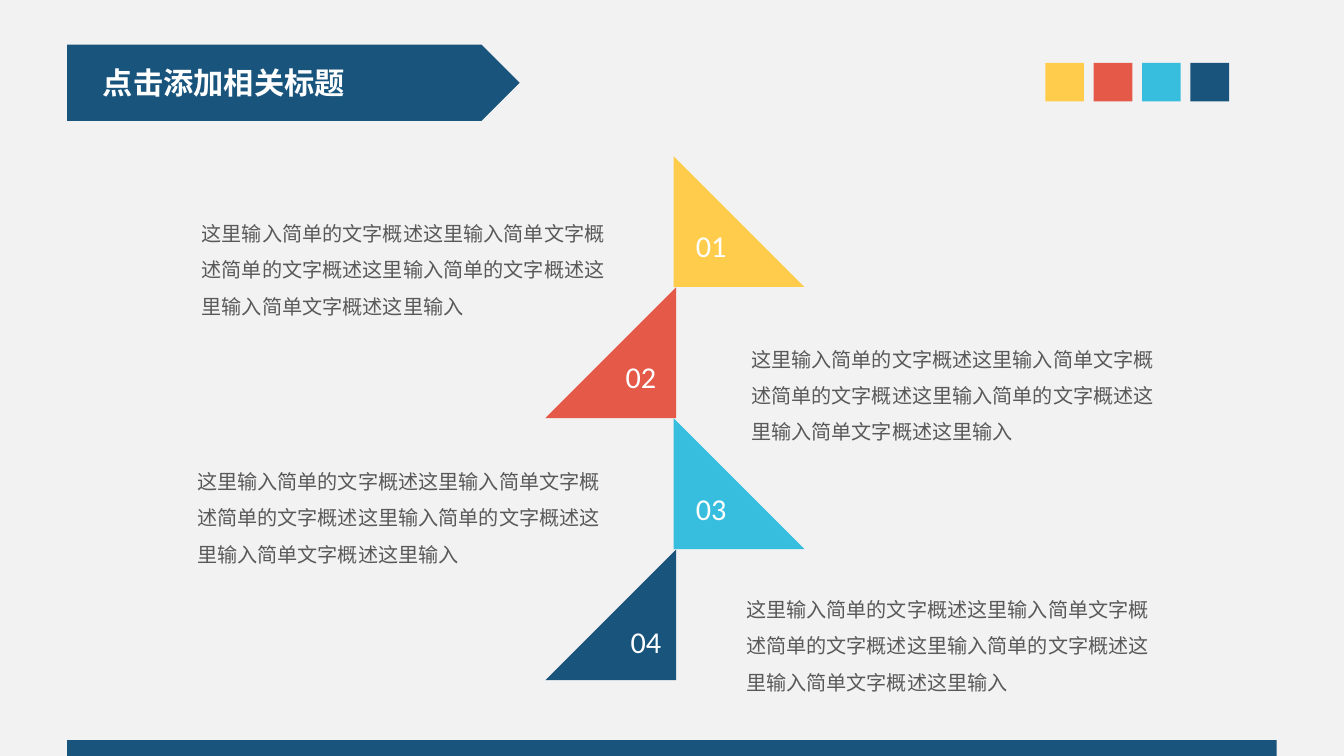
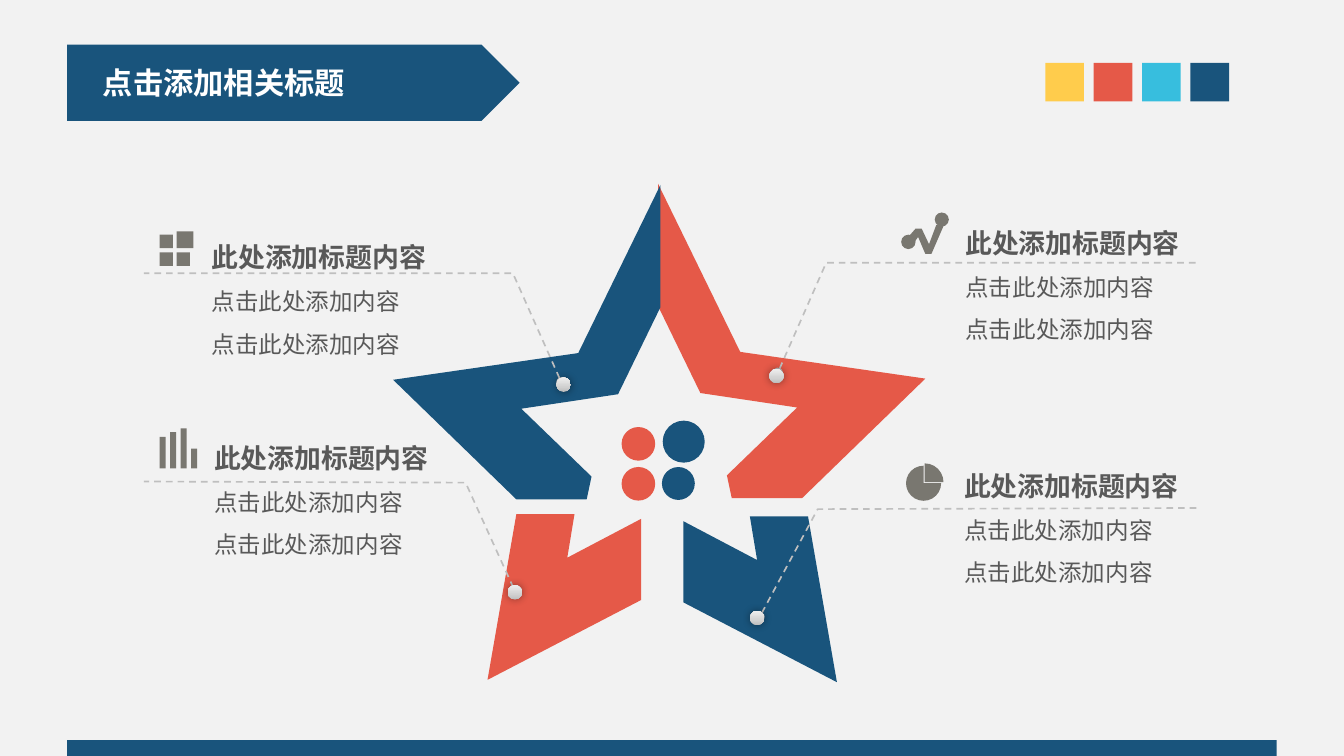
from copy import deepcopy

from lxml import etree
from pptx import Presentation
from pptx.dml.color import RGBColor
from pptx.enum.dml import MSO_LINE
from pptx.enum.shapes import MSO_SHAPE
from pptx.enum.text import MSO_ANCHOR, MSO_AUTO_SIZE, PP_ALIGN
from pptx.oxml.ns import qn
from pptx.util import Pt

RECT = MSO_SHAPE.RECTANGLE
OVAL = MSO_SHAPE.OVAL
ARROW = MSO_SHAPE.PENTAGON
CORNER = MSO_SHAPE.RIGHT_TRIANGLE
PIE = MSO_SHAPE.PIE
WEDGE = MSO_SHAPE.PIE_WEDGE
DASH = MSO_LINE.DASH
TOP = MSO_ANCHOR.TOP
GROW = MSO_AUTO_SIZE.SHAPE_TO_FIT_TEXT
LEFT, CENTER, EVEN = PP_ALIGN.LEFT, PP_ALIGN.CENTER, PP_ALIGN.JUSTIFY

YELLOW, RED, CYAN, NAVY = PALETTE = "FFCC4C", "E55948", "37BEDE", "19547C"
PAPER, INK, WHITE = "F2F2F2", "595959", "FFFFFF"
ICON, RULE = "797770", "BFBFBF"
METAL = (0, "BDBDBD"), (0.35, "D1D1D1"), (1, "EEEEEE")
LATIN, HAN = "Calibri", "Noto Sans CJK SC"

TITLE = "点击添加相关标题"
BODY = "这里输入简单的文字概述这里输入简单文字概述简单的文字概述这里输入简单的文字概述这里输入简单文字概述这里输入"
HEAD = "此处添加标题内容"
ITEM = "点击此处添加内容"


def color(code):
    return RGBColor.from_string(code)


def write(frame, text, size=18, font=LATIN, ink=INK, bold=False,
          align=LEFT, space=None):
    """Fill the first paragraph if it is free, else add one."""
    last = frame.paragraphs[-1]
    para = frame.add_paragraph() if last.runs else last
    para.alignment = align
    if space:
        para.line_spacing = space
    run = para.add_run()
    run.text = text
    run.font.size = Pt(size)
    run.font.bold = bold
    run.font.name = font
    run.font.color.rgb = color(ink)
    latin = para._p.find(".//" + qn("a:latin"))
    latin.addnext(latin.makeelement(qn("a:ea"), {"typeface": HAN}))


def mirror(points, span, drop):
    """Reflect about x = span / 2, then move down by drop."""
    return [(span - x, y + drop) for x, y in points]


class Deck:
    def __init__(self):
        self.show = Presentation()
        self.show.slide_width, self.show.slide_height = Pt(800), Pt(450)
        fill = self.show.slide_master.background.fill
        fill.solid()
        fill.fore_color.rgb = color(PAPER)
        self.slide = None

    def page(self, title):
        """Start a slide with the shared band, swatches and footer."""
        self.slide = self.show.slides.add_slide(self.show.slide_layouts[5])
        self.shape(ARROW, 40, 26.6, 269.3, 45.4, NAVY)
        self.shape(RECT, 40, 440.6, 720, 11.5, NAVY)
        for i, code in enumerate(PALETTE):
            self.shape(RECT, 622.2 + 28.8 * i, 37.4, 23, 23, code)
        box = self.slide.shapes.title
        self.slide.shapes.element.append(box.element)
        box.left, box.top, box.width, box.height = map(Pt, (54, 34.6, 160, 29))
        self.setup(box.text_frame, wrap=False)
        write(box.text_frame, title, font=HAN, ink=WHITE, bold=True)

    def setup(self, frame, wrap=True, inset=(7.2, 3.6)):
        frame.word_wrap = wrap
        frame.auto_size = GROW
        frame.vertical_anchor = TOP
        frame.margin_left = frame.margin_right = Pt(inset[0])
        frame.margin_top = frame.margin_bottom = Pt(inset[1])

    def box(self, x, y, w, h, **style):
        area = self.slide.shapes.add_textbox(Pt(x), Pt(y), Pt(w), Pt(h))
        self.setup(area.text_frame, **style)
        return area.text_frame

    def group(self):
        return self.slide.shapes.add_group_shape()

    def paint(self, item, code):
        item.shadow.inherit = False
        item.fill.solid()
        item.fill.fore_color.rgb = color(code)
        item.line.fill.background()
        return item

    def shape(self, kind, x, y, w, h, code, home=None):
        shapes = (home or self.slide).shapes
        item = shapes.add_shape(kind, Pt(x), Pt(y), Pt(w), Pt(h))
        return self.paint(item, code)

    def trace(self, points, close, home=None):
        first, *rest = [(Pt(x), Pt(y)) for x, y in points]
        pen = (home or self.slide).shapes.build_freeform(*first)
        pen.add_line_segments(rest, close=close)
        return pen.convert_to_shape()

    def area(self, points, code, home=None):
        return self.paint(self.trace(points, True, home), code)

    def leader(self, points):
        item = self.trace(points, False)
        item.shadow.inherit = False
        item.fill.background()
        item.line.color.rgb = color(RULE)
        item.line.width = Pt(1)
        item.line.dash_style = DASH
        line = item.element.find(".//" + qn("a:ln"))
        etree.SubElement(line, qn("a:headEnd"), type="oval")

    def dot(self, x, y, size=8.6):
        """Metal bead centred on x, y with a soft shadow."""
        item = self.shape(OVAL, x - size / 2, y - size / 2, size, size, RULE)
        item.fill.gradient()
        item.fill.gradient_angle = 90
        stops = item.element.find(".//" + qn("a:gsLst"))
        stops.append(deepcopy(stops[0]))
        for stop, (place, code) in zip(item.fill.gradient_stops, METAL):
            stop.position = place
            stop.color.rgb = color(code)
        glow = etree.SubElement(
            item.element.find(".//" + qn("a:effectLst")), qn("a:outerShdw"),
            blurRad=str(Pt(5)), dist="0", dir="0", algn="ctr", rotWithShape="0")
        tint = etree.SubElement(glow, qn("a:srgbClr"), val="000000")
        etree.SubElement(tint, qn("a:alpha"), val="40000")

    def note(self, x, y, w, h):
        frame = self.box(x, y, w, h, inset=(9.4, 5))
        write(frame, HEAD, size=16, font=HAN, bold=True, align=EVEN, space=1.5)
        for _ in range(2):
            write(frame, ITEM, size=14, font=HAN, align=EVEN, space=1.5)


def ladder(deck):
    """Four triangles that alternate sides down the middle."""
    deck.page(TITLE)
    steps = [  # number left, number top, body left, body top
        (406.8, 131.8, 113, 121),
        (365, 209.5, 440, 195.8),
        (406.8, 288, 110.2, 268.6),
        (368, 367.2, 437, 344.9),
    ]
    for i, code in enumerate(PALETTE):
        flip = i % 2
        tri = deck.shape(CORNER, 324.7 if flip else 401, 93 + 78 * i,
                         77.8, 77.8, code)
        if flip:
            tri.element.find(".//" + qn("a:xfrm")).set("flipH", "1")
    for i, (x, y, left, top) in enumerate(steps, 1):
        write(deck.box(x, y, 33, 29, wrap=False), f"{i:02}",
              ink=WHITE, align=CENTER)
        write(deck.box(left, top, 255, 72.7), BODY, size=12, space=1.5)


def icons(deck):
    trend = deck.group()
    deck.area([(540.7, 141), (545, 136.1), (548.6, 136.1), (553, 145.4),
               (557.3, 133.9), (561.6, 134.6), (554.4, 151.2),
               (550.8, 151.2), (546.5, 141.1), (543, 146)], ICON, trend)
    deck.shape(OVAL, 536.4, 139.7, 8.6, 8.6, ICON, trend)
    deck.shape(OVAL, 556.4, 126.5, 8.4, 8.4, ICON, trend)

    tiles = deck.group()
    for x, y, size in [(95, 139.7, 8), (105.1, 137.7, 10),
                       (95, 150.3, 8), (105.1, 150.3, 8)]:
        deck.shape(RECT, x, y, size, size, ICON, tiles)

    pie = deck.group()
    deck.shape(PIE, 539.3, 277.2, 20.9, 20.9, ICON, pie)
    deck.shape(WEDGE, 550.4, 275.8, 11.2, 11.2, ICON, pie).rotation = 90

    bars = deck.group()
    for i, tall in enumerate([18.7, 21.6, 23.8, 11.8]):
        deck.shape(RECT, 95 + 6.25 * i, 278.8 - tall, 3.6, tall, ICON, bars)


def star(deck):
    """Star in four parts, each with a leader and a note."""
    deck.page(TITLE)
    leg = [(406.8, 310.3), (406.8, 358.6), (498.2, 406.1),
           (481, 307.4), (446.4, 307.4), (450.7, 333.4)]
    arm = [(440.6, 209.5), (391.7, 109.4), (391.7, 182.2),
           (416.9, 234), (474.5, 242.6), (432.7, 283),
           (435.6, 296.6), (477.4, 296.6), (550.8, 225.4)]
    deck.area(leg, NAVY)
    deck.area(mirror(leg, 788.4, -1.4), RED)
    deck.area(arm, RED)
    deck.area(mirror(arm, 784.8, 0.7), NAVY)

    for x, y, size, code in [(370, 254.2, 20, RED), (394.5, 250.4, 25, NAVY),
                             (370, 278, 20, RED), (394, 278, 19.6, NAVY)]:
        deck.shape(OVAL, x, y, size, size, code)

    notes = [  # note box, leader points, bead centre
        ((565.2, 120.2, 180.7, 111.6),
         [(463, 221.8), (491.8, 156.4), (714.2, 156.4)], (462.2, 223.9)),
        ((116.6, 128.9, 201.6, 111.6),
         [(334.1, 227.5), (305.3, 162.7), (85.7, 162.7)], (335.5, 229)),
        ((118.1, 248.4, 200.9, 90),
         [(306.7, 352.1), (277.2, 287.3), (85.7, 286.6)], (306.5, 352.6)),
        ((564.5, 265, 149.8, 118.8),
         [(452.2, 367.2), (486.7, 303.1), (714.2, 302.4)], (450.7, 367.9)),
    ]
    icons(deck)
    for area, points, bead in notes:
        deck.note(*area)
        deck.leader(points)
        deck.dot(*bead)


def main():
    deck = Deck()
    ladder(deck)
    star(deck)
    deck.show.save("out.pptx")


if __name__ == "__main__":
    main()
